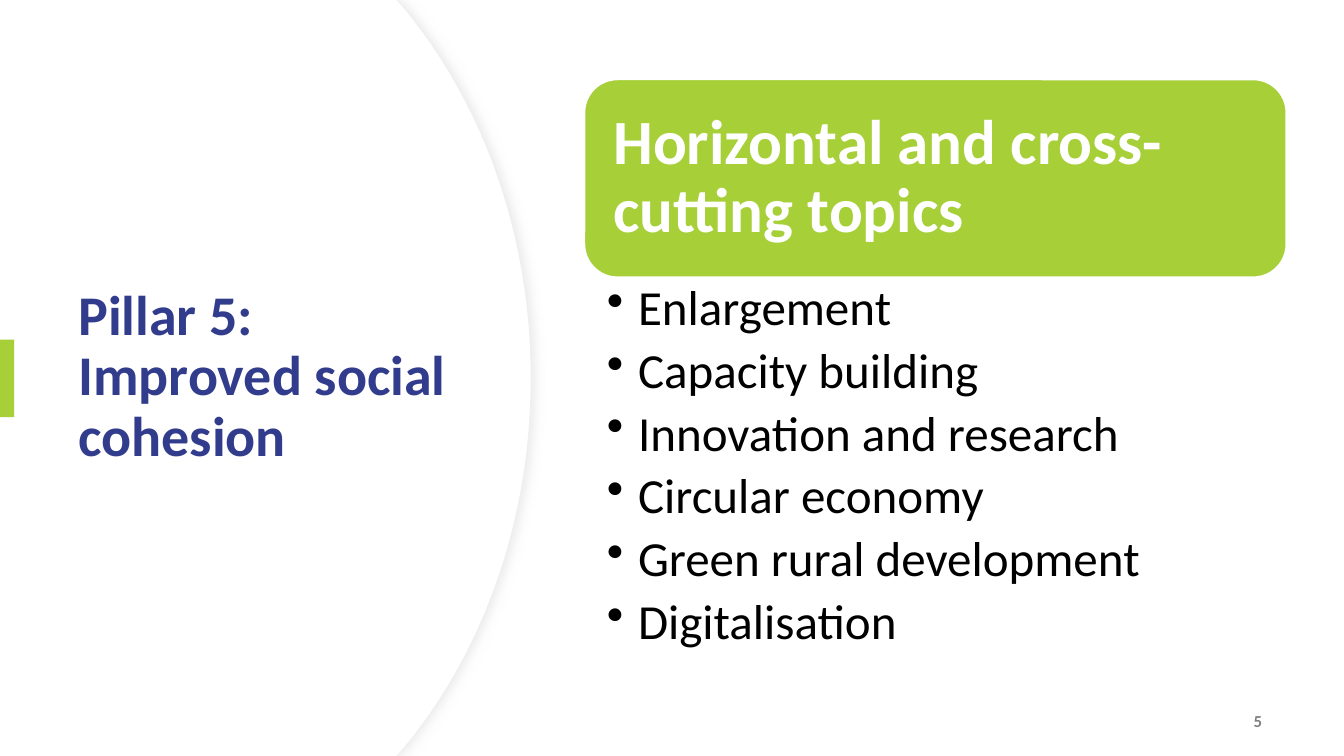
from lxml.etree import SubElement
from pptx import Presentation
from pptx.dml.color import RGBColor
from pptx.enum.shapes import MSO_SHAPE
from pptx.enum.text import MSO_ANCHOR, PP_ALIGN
from pptx.oxml import parse_xml
from pptx.oxml.ns import nsdecls, qn
from pptx.util import Inches, Pt

THEME = {
    "font": "Calibri",
    "green": RGBColor.from_string("A6CF38"),
    "navy": RGBColor.from_string("323C8C"),
    "white": RGBColor.from_string("FFFFFF"),
    "black": RGBColor.from_string("000000"),
    "grey": RGBColor.from_string("808080"),
    "edge": RGBColor.from_string("EFEFEF"),
    "pillar": Pt(40), "heading": Pt(45), "topic": Pt(35), "number": Pt(12),
}
TOPICS = ["Enlargement", "Capacity building", "Innovation and research",
          "Circular economy", "Green rural development", "Digitalisation"]

deck = Presentation()
deck.slide_width, deck.slide_height = Inches(13.33), Inches(7.5)
slide = deck.slides.add_slide(deck.slide_layouts[6])
COL, ROW = deck.slide_width / 100, deck.slide_height / 100


def grid(left, top, width, height):
    """Turn columns and rows of a 100 by 100 grid into slide lengths."""
    return [int(n * unit) for n, unit in zip((left, top, width, height), (COL, ROW) * 2)]


def write(paragraph, text, size, color, bold=True):
    run = paragraph.add_run()
    run.text = text
    run.font.name, run.font.size, run.font.bold = THEME["font"], THEME[size], bold
    run.font.color.rgb = THEME[color]


# Curved white panel: a soft-edged outline below, a plain face on top
STEPS = 24
START, PULL_1, PULL_2, TIP = (30.08, 1.07), (35.93, 13.6), (39.53, 30.93), (39.53, 50)
upper = [(29.55, 0)]
for step in range(STEPS + 1):
    t = step / STEPS
    weights = ((1 - t) ** 3, 3 * t * (1 - t) ** 2, 3 * t ** 2 * (1 - t), t ** 3)
    upper.append(tuple(sum(w * point[axis] for w, point in zip(weights, (START, PULL_1, PULL_2, TIP)))
                       for axis in (0, 1)))
lower = [(x, 100 - y) for x, y in reversed(upper[:-1])]

for inset, has_edge in ((0, True), (0.07, False)):
    outline = slide.shapes.build_freeform(0, 0, scale=1)
    outline.add_line_segments([(int((x - inset) * COL), int(y * ROW)) for x, y in upper + lower]
                              + [(0, int(100 * ROW))], close=True)
    panel = outline.convert_to_shape()
    panel.shadow.inherit = False
    panel.fill.solid()
    panel.fill.fore_color.rgb = THEME["white"]
    if has_edge:
        panel.line.color.rgb, panel.line.width = THEME["edge"], Pt(0.75)
        panel.element.spPr.find(qn("a:effectLst")).append(parse_xml(
            f'<a:outerShdw {nsdecls("a")} blurRad="{Pt(7)}" dist="{Pt(3)}" dir="0" algn="l" rotWithShape="0">'
            '<a:srgbClr val="D9D9D9"><a:alpha val="50000"/></a:srgbClr></a:outerShdw>'))
    else:
        panel.line.fill.background()

# Pillar name with its green marker at the slide's edge
pillar = slide.shapes.add_textbox(*grid(5.1, 16.93, 29.55, 66)).text_frame
pillar.word_wrap, pillar.vertical_anchor = True, MSO_ANCHOR.MIDDLE
pillar.paragraphs[0].line_spacing = 0.9
write(pillar.paragraphs[0], "Pillar 5: Improved social cohesion", "pillar", "navy")

marker = slide.shapes.add_shape(MSO_SHAPE.RECTANGLE, *grid(0, 44.93, 1.05, 10.27))
heading = slide.shapes.add_shape(MSO_SHAPE.ROUNDED_RECTANGLE, *grid(43.5, 10.53, 52.2, 26.13))
for block in (marker, heading):
    block.shadow.inherit = False
    block.fill.solid()
    block.fill.fore_color.rgb = THEME["green"]
marker.line.fill.background()
heading.line.color.rgb, heading.line.width = THEME["white"], Pt(1)

# Slide number
number = slide.shapes.add_textbox(*grid(72.15, 92.67, 22.5, 5.33)).text_frame
number.word_wrap, number.vertical_anchor = True, MSO_ANCHOR.MIDDLE
number.paragraphs[0].alignment = PP_ALIGN.RIGHT
number.paragraphs[0].space_after = Pt(6)
write(number.paragraphs[0], "5", "number", "grey")

# Heading and its topics
title = heading.text_frame
title.word_wrap, title.vertical_anchor = True, MSO_ANCHOR.MIDDLE
title.margin_left = title.margin_right = title.margin_top = title.margin_bottom = Inches(0.19)
title.paragraphs[0].alignment = PP_ALIGN.LEFT
title.paragraphs[0].line_spacing = 0.9
write(title.paragraphs[0], "Horizontal and cross-cutting topics", "heading", "white")

topics = slide.shapes.add_textbox(*grid(43.5, 36.67, 52.2, 52.93)).text_frame
topics.word_wrap = True
topics.margin_left, topics.margin_right = Inches(0.22), Inches(0.35)
topics.margin_top = topics.margin_bottom = Inches(0.06)
for index, topic in enumerate(TOPICS):
    item = topics.add_paragraph() if index else topics.paragraphs[0]
    item.level, item.line_spacing, item.space_after = 1, 0.9, Pt(7)
    properties = item._p.get_or_add_pPr()
    properties.set("marL", str(Inches(0.31)))
    properties.set("indent", str(-Inches(0.31)))
    SubElement(properties, qn("a:buChar"), char="•")
    write(item, topic, "topic", "black", bold=False)

deck.save("out.pptx")
